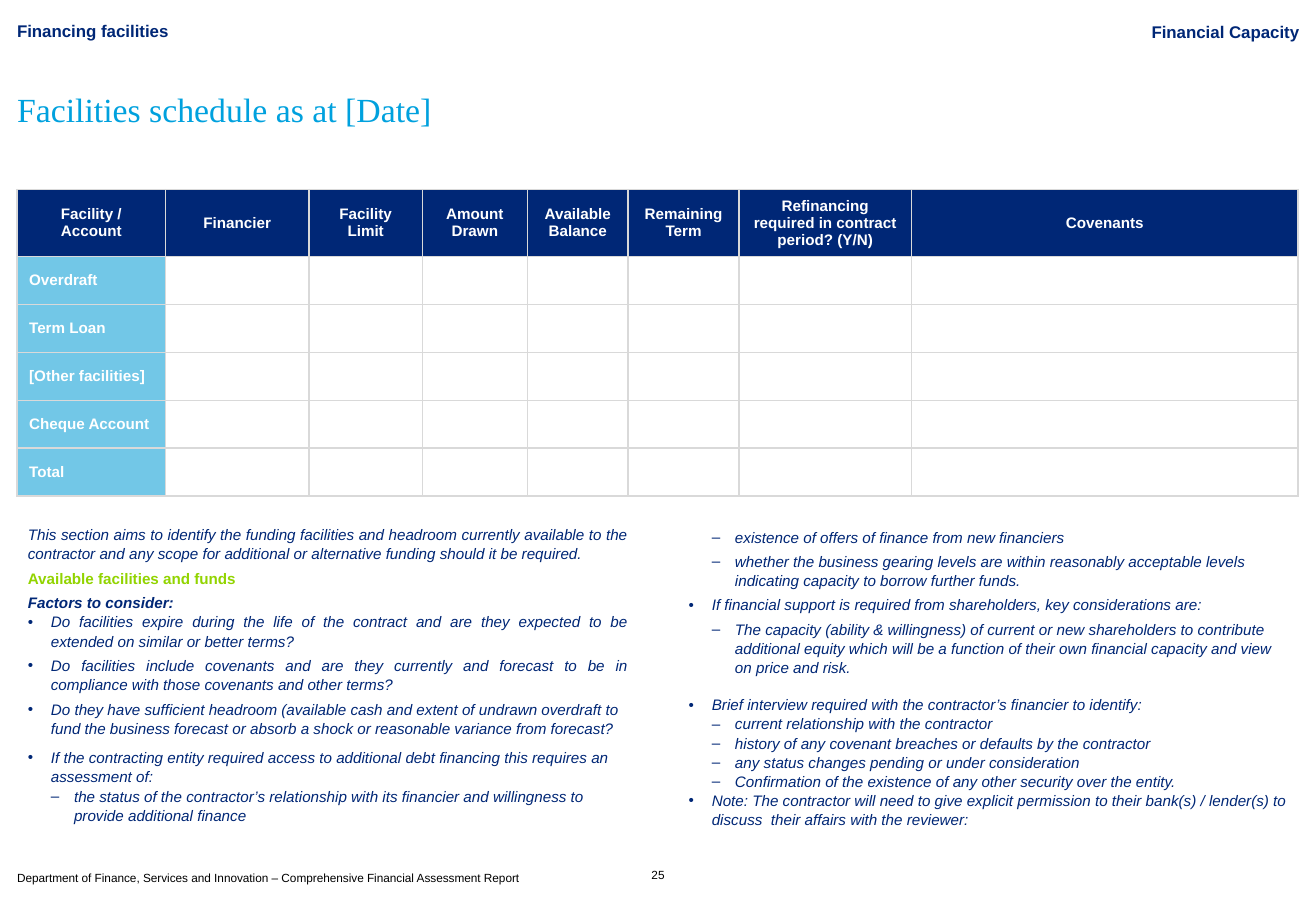
import pptx
import pptx.dml.color
import pptx.enum.text
import pptx.util
from lxml import etree

Pt = pptx.util.Pt
ALIGN = pptx.enum.text.PP_ALIGN
ANCHOR = pptx.enum.text.MSO_ANCHOR
NAVY, SKY, CYAN, GREEN = "002776", "72C7E7", "00A1DE", "92D400"
WHITE, BLACK, GREY = "FFFFFF", "000000", "D9D9D9"
BODY_SIZE = 9
PARA_GAP = 3.15
INDENT = 13.7
BULLETS = {1: "•", 2: "–"}

COLUMNS = [
    ("Facility / Account", 88), ("Financier", 85), ("Facility Limit", 67.2),
    ("Amount Drawn", 62.2), ("Available Balance", 59.8), ("Remaining Term", 65.6),
    ("Refinancing required in contract period? (Y/N)", 102.2), ("Covenants", 229.2),
]
FACILITIES = ["Overdraft", "Term Loan", "[Other facilities]", "Cheque Account", "Total"]

# Each entry: text, bullet level, space after, then any other settings
LEFT_NOTES = [
    ("This section aims to identify the funding facilities and headroom currently available to the "
     "contractor and any scope for additional or alternative funding should it be required.",
     0, PARA_GAP, {"align": ALIGN.JUSTIFY}),
    ("Available facilities and funds", 0, PARA_GAP,
     {"align": ALIGN.JUSTIFY, "color": GREEN, "bold": True, "italic": False}),
    ("Factors to consider:", 0, 0, {"align": ALIGN.JUSTIFY, "bold": True}),
    ("Do facilities expire during the life of the contract and are they expected to be extended on "
     "similar or better terms?", 1, PARA_GAP, {"align": ALIGN.JUSTIFY}),
    ("Do facilities include covenants and are they currently and forecast to be in compliance with "
     "those covenants and other terms?", 1, PARA_GAP, {"align": ALIGN.JUSTIFY}),
    ("Do they have sufficient headroom (available cash and extent of undrawn overdraft to fund the "
     "business forecast or absorb a shock or reasonable variance from forecast?", 1, 6, {}),
    ("If the contracting entity required access to additional debt financing this requires an "
     "assessment of:", 1, 0, {}),
    ("the status of the contractor’s relationship with its financier and willingness to provide "
     "additional finance", 2, 0, {}),
]
RIGHT_NOTES = [
    ("existence of offers of finance from new financiers", 2, 3, {}),
    ("whether the business gearing levels are within reasonably acceptable levels indicating "
     "capacity to borrow further funds.", 2, 3, {}),
    ("If financial support is required from shareholders, key considerations are:", 1, 3, {}),
    ("The capacity (ability & willingness) of current or new shareholders to contribute additional "
     "equity which will be a function of their own financial capacity and view on price and risk.",
     2, 10.8, {}),
    ("Brief interview required with the contractor’s financier to identify:", 1, 0, {}),
    ("current relationship with the contractor", 2, 0, {}),
    ("history of any covenant breaches or defaults by the contractor", 2, 0, {}),
    ("any status changes pending or under consideration", 2, 0, {}),
    ("Confirmation of the existence of any other security over the entity.", 2, 0, {}),
    ("Note: The contractor will need to give explicit permission to their bank(s) / lender(s) to "
     "discuss  their affairs with the reviewer:", 1, 0, {}),
]


def rgb(color):
    return pptx.dml.color.RGBColor.from_string(color)


def sub(parent, tag, **attrs):
    """Append a DrawingML child element."""
    return etree.SubElement(parent, pptx.oxml.ns.qn(tag), attrs)


def style(p, size, color, align=ALIGN.LEFT, bold=False, italic=False, name="Arial"):
    p.alignment = align
    f = p.font
    f.size, f.bold, f.italic, f.name = Pt(size), bold, italic, name
    f.color.rgb = rgb(color)


def text_frame(s, box, margins=(0, 0), anchor=ANCHOR.TOP, wrap=True):
    """Add a text box; margins are horizontal and vertical."""
    tf = s.shapes.add_textbox(*map(Pt, box)).text_frame
    tf.word_wrap = wrap
    tf.vertical_anchor = anchor
    tf.margin_left = tf.margin_right = Pt(margins[0])
    tf.margin_top = tf.margin_bottom = Pt(margins[1])
    return tf


def add_label(s, box, text, size, color, margins=(0, 0), anchor=ANCHOR.TOP, wrap=True, **look):
    p = text_frame(s, box, margins, anchor, wrap).paragraphs[0]
    p.text = text
    style(p, size, color, **look)


def add_header(s, box):
    x, y, w, h = box
    add_label(s, (x, y, w / 2, 12), "Financing facilities", 10, NAVY, bold=True)
    add_label(s, (x + w / 2, y + 0.7, w / 2, 12), "Financial Capacity", 10, NAVY,
              bold=True, align=ALIGN.RIGHT)
    add_label(s, (x, y + 12.3, w, h - 12.3), "Facilities schedule as at [Date]", 20, CYAN,
              anchor=ANCHOR.MIDDLE, name="Times New Roman")


def fill_cell(cell, text, fill, align):
    cell.vertical_anchor = ANCHOR.MIDDLE
    p = cell.text_frame.paragraphs[0]
    p.text = text
    style(p, BODY_SIZE, WHITE, align, bold=True)
    tcPr = cell._tc.get_or_add_tcPr()
    for side in ("a:lnL", "a:lnR", "a:lnT", "a:lnB"):
        line = sub(tcPr, side, w=str(Pt(1)))
        sub(sub(line, "a:solidFill"), "a:srgbClr", val=GREY)
    if fill:
        cell.fill.solid()
        cell.fill.fore_color.rgb = rgb(fill)
    else:
        cell.fill.background()


def add_schedule(s, box, header_height=37):
    h = box[3]
    table = s.shapes.add_table(len(FACILITIES) + 1, len(COLUMNS), *map(Pt, box)).table
    for column, (_, width) in zip(table.columns, COLUMNS):
        column.width = Pt(width)
    for row in table.rows:
        row.height = Pt((h - header_height) / len(FACILITIES))
    table.rows[0].height = Pt(header_height)
    for i, (heading, _) in enumerate(COLUMNS):
        fill_cell(table.cell(0, i), heading, NAVY, ALIGN.CENTER)
        for j, facility in enumerate(FACILITIES, 1):
            if i == 0:
                fill_cell(table.cell(j, i), facility, SKY, ALIGN.JUSTIFY)
            else:
                fill_cell(table.cell(j, i), "", None, ALIGN.LEFT)


def add_notes(s, box, notes):
    tf = text_frame(s, box, (7.2, 3.6))
    for i, (text, level, after, look) in enumerate(notes):
        p = tf.add_paragraph() if i else tf.paragraphs[0]
        p.text = text
        p.line_spacing = 1.05
        p.space_after = Pt(after)
        if level:
            pPr = p._p.get_or_add_pPr()
            pPr.set("marL", str(Pt(level * INDENT)))
            pPr.set("indent", str(-Pt(INDENT)))
            sub(pPr, "a:buFont", typeface="Arial")
            sub(pPr, "a:buChar", char=BULLETS[level])
        style(p, BODY_SIZE, **{"color": NAVY, "italic": True, **look})


def add_footer(s, box):
    x, y, w, h = box
    add_label(s, box, "Department of Finance, Services and Innovation – Comprehensive Financial "
              "Assessment Report", 7, BLACK, margins=(0, 2.9), wrap=False)
    add_label(s, (x + w / 2 - 10.8, y + 0.7, 21.6, 8.6), "25", 7, BLACK,
              anchor=ANCHOR.BOTTOM, align=ALIGN.CENTER)


def main():
    prs = pptx.Presentation()
    prs.slide_width, prs.slide_height = Pt(779.76), Pt(540)
    s = prs.slides.add_slide(prs.slide_layouts[6])
    left, width = 10.1, 759.6
    add_header(s, (left, 12.2, width, 93))
    add_schedule(s, (left, 112.4, 759.2, 179))
    add_notes(s, (9.4, 307.4, 369.4, 185), LEFT_NOTES)
    add_notes(s, (401, 308.9, 368.7, 205), RIGHT_NOTES)
    add_footer(s, (left, 513.4, width, 14.4))
    prs.save("out.pptx")


if __name__ == "__main__":
    main()
